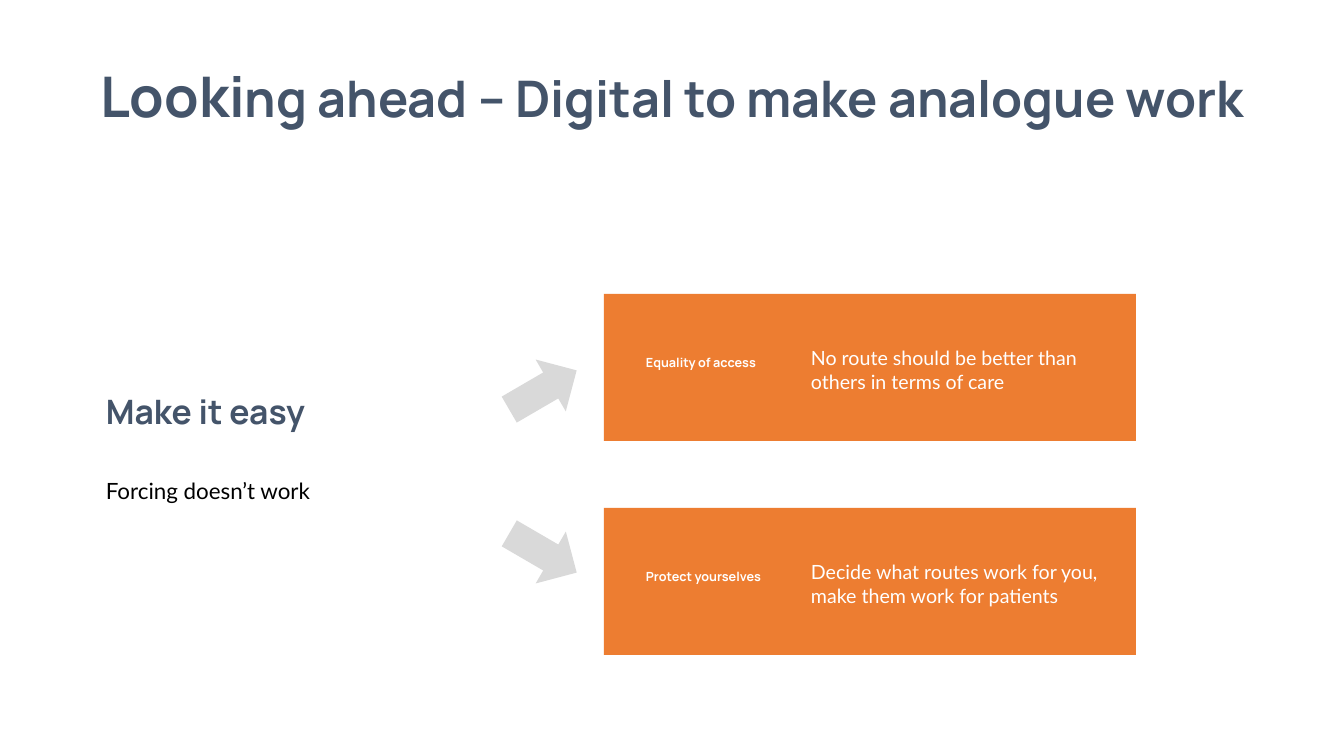
from pptx import Presentation
from pptx.dml.color import RGBColor
from pptx.enum.shapes import MSO_SHAPE as Kind
from pptx.enum.text import MSO_AUTO_SIZE as Fit, PP_ALIGN as Align
from pptx.util import Emu, Pt

SCALE = 914400 / 100.8
NAVY = RGBColor(0x44, 0x54, 0x6A)
ORANGE = RGBColor(0xED, 0x7D, 0x31)
GREY = RGBColor(0xD9, 0xD9, 0xD9)
WHITE = RGBColor(0xFF, 0xFF, 0xFF)
BLACK = RGBColor(0, 0, 0)

TITLE = {"name": "Manrope", "size": Pt(36), "bold": True}
HEAD = {"name": "Manrope", "size": Pt(24), "bold": True}
LABEL = {"name": "Manrope", "size": Pt(9), "bold": True}
LEAD = {"name": "Lato", "size": Pt(16)}
BODY = {"name": "Lato", "size": Pt(14)}

CARDS = [
    ("Equality of access",
     "No route should be better than others in terms of care"),
    ("Protect yourselves",
     "Decide what routes work for you, make them work for patients"),
]


def px(*nums):
    return [Emu(round(n * SCALE)) for n in nums]


def add_run(para, text, style, color):
    run = para.add_run()
    run.text = text
    for key, value in style.items():
        setattr(run.font, key, value)
    run.font.color.rgb = color


def add_text(shapes, box, text, style, color):
    frame = shapes.add_textbox(*px(*box)).text_frame
    for key, value in {"word_wrap": True,
                       "auto_size": Fit.SHAPE_TO_FIT_TEXT}.items():
        setattr(frame, key, value)
    para = frame.paragraphs[0]
    add_run(para, text, style, color)
    return para


def add_block(shapes, kind, box, color):
    block = shapes.add_shape(kind, *px(*box))
    block.shadow.inherit = False
    block.fill.solid()
    block.fill.fore_color.rgb = color
    block.line.fill.background()
    return block


def add_title(shapes, box):
    para = add_text(shapes, box, "Looki", TITLE | {"size": Pt(40)}, NAVY)
    para.alignment = Align.CENTER
    add_run(para, "ng ahead – Digital to make analogue work", TITLE, NAVY)


def add_claim(shapes, box):
    left, top, width, height = box
    group = shapes.add_group_shape().shapes
    add_text(group, (left, top, width, 50), "Make it easy", HEAD, NAVY)
    add_text(group, (left, top + height - 37, width, 37),
             "Forcing doesn’t work", LEAD, BLACK)


def add_arrows(shapes, box):
    left, top, width, height = box
    tall = 60
    group = shapes.add_group_shape().shapes
    for y, turn in ((top, -30.2), (top + height - tall, 30.2)):
        arrow = add_block(group, Kind.RIGHT_ARROW, (left, y, width, tall), GREY)
        arrow.rotation = turn


def add_card(shapes, box, label, body):
    left, top, width, height = box
    add_block(shapes, Kind.RECTANGLE, box, ORANGE)
    add_text(shapes, (left + 32, top + 56, 153, 25), label, LABEL, WHITE)
    add_text(shapes, (left + 197, top + 47, 314, 57), body, BODY, WHITE)


def main():
    deck = Presentation()
    deck.slide_width, deck.slide_height = px(1344, 756)
    shapes = deck.slides.add_slide(deck.slide_layouts[6]).shapes
    add_title(shapes, (-28, 57, 1400, 78))
    for i, (label, body) in enumerate(CARDS):
        add_card(shapes, (604, 294 + 214 * i, 532, 147), label, body)
    add_claim(shapes, (96, 386, 304, 123))
    add_arrows(shapes, (504, 360, 78, 223))
    deck.save("out.pptx")


if __name__ == "__main__":
    main()
